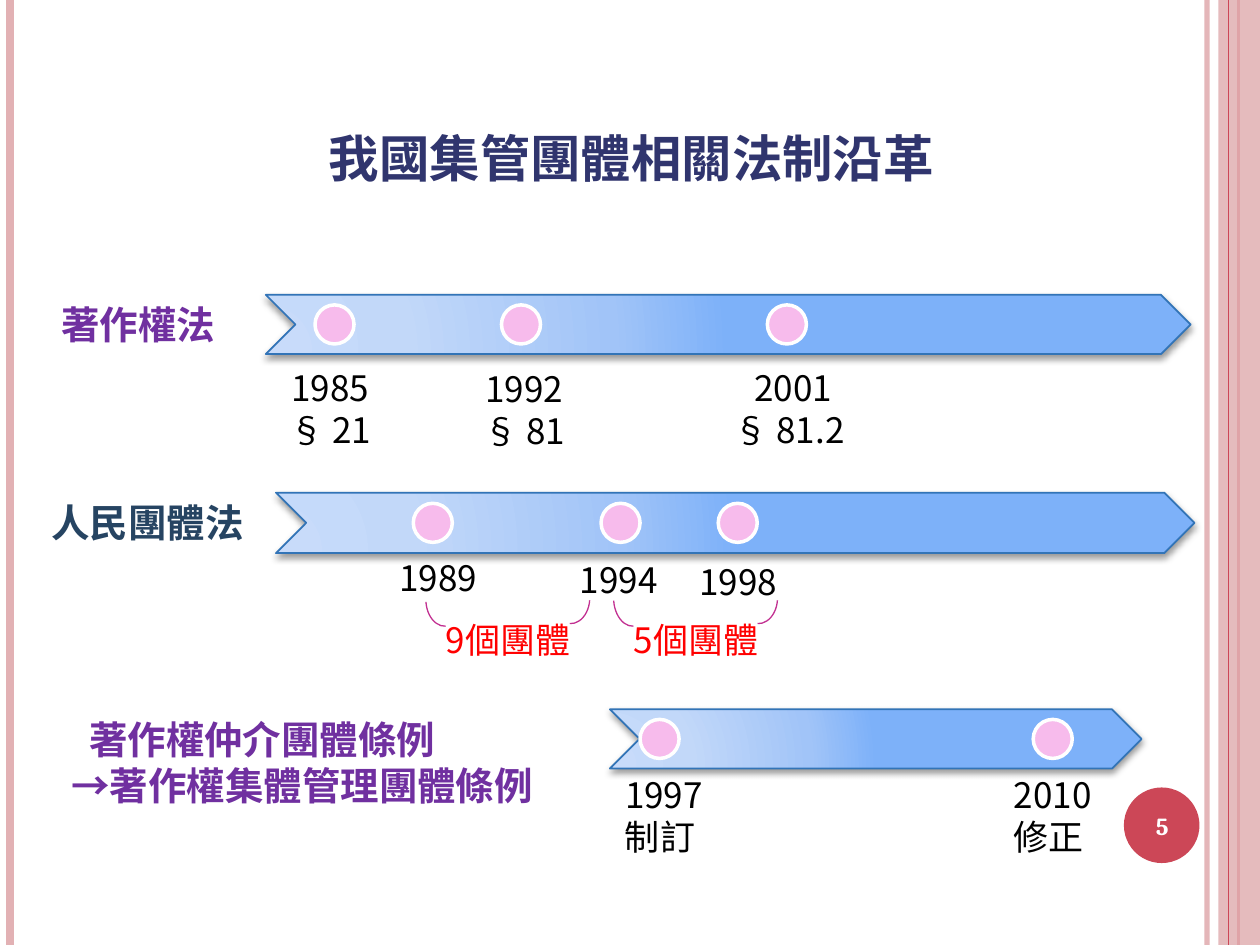
"""Build the slide on the legal history of collective management organisations."""
import pptx
import pptx.dml.color
import pptx.enum.shapes
import pptx.enum.text
import pptx.oxml
import pptx.oxml.ns
import pptx.util
from pptx.util import Inches

RGBColor = pptx.dml.color.RGBColor
MSO_SHAPE = pptx.enum.shapes.MSO_SHAPE
ALIGN = pptx.enum.text.PP_ALIGN
ANCHOR = pptx.enum.text.MSO_ANCHOR
AUTO_SIZE = pptx.enum.text.MSO_AUTO_SIZE
qn = pptx.oxml.ns.qn

NAVY = RGBColor(0x30, 0x35, 0x6E)
PURPLE = RGBColor(0x70, 0x30, 0xA0)
SLATE = RGBColor(0x26, 0x44, 0x62)
BLACK = RGBColor(0, 0, 0)
WHITE = RGBColor(0xFF, 0xFF, 0xFF)
RED = RGBColor(0xFF, 0, 0)
ROSE = RGBColor(0xE2, 0xB1, 0xB4)
CRIMSON = RGBColor(0xCC, 0x47, 0x57)
PINK = RGBColor(0xF7, 0xBB, 0xEC)
MAGENTA = RGBColor(0xC2, 0x30, 0x91)
BLUE = RGBColor(0x32, 0x74, 0xB7)
ARROW_STOPS = [
    (0, RGBColor(0xC8, 0xDB, 0xFA)),
    (30, RGBColor(0xC2, 0xD8, 0xF9)),
    (75, RGBColor(0xA1, 0xC4, 0xF8)),
    (100, RGBColor(0x7D, 0xB1, 0xF9)),
]
CJK = "Noto Sans CJK SC"
DOT = 0.31


def drawing_xml(body):
    """Parse one DrawingML element."""
    head, tail = body.split(" ", 1)
    return pptx.oxml.parse_xml(f"{head} {pptx.oxml.ns.nsdecls('a')} {tail}")


class TimelineSlide:
    """Hold the style and the current slide."""

    def __init__(self, presentation):
        self.slide = presentation.slides.add_slide(presentation.slide_layouts[5])
        self.canvas = self.slide.shapes

    def begin_group(self):
        self.canvas = self.slide.shapes.add_group_shape().shapes

    def end_group(self):
        self.canvas = self.slide.shapes

    def set_alpha(self, element, percent):
        color = next(element.iter(qn("a:srgbClr")))
        color.append(drawing_xml(f'<a:alpha val="{percent * 1000}"/>'))

    def format_text(self, frame, size, color, bold=False, align=ALIGN.LEFT, font=CJK):
        for paragraph in frame.paragraphs:
            paragraph.alignment = align
            for run in paragraph.runs:
                run.font.size = pptx.util.Pt(size)
                run.font.bold = bold
                run.font.color.rgb = color
                run.font.name = font
                run.font._element.append(drawing_xml(f'<a:ea typeface="{font}"/>'))

    def title(self, text):
        heading = self.slide.shapes.title
        heading.left, heading.top = Inches(0.51), Inches(0.52)
        heading.width, heading.height = Inches(9), Inches(1.04)
        frame = heading.text_frame
        frame.text = text
        frame.auto_size = AUTO_SIZE.NONE
        frame.vertical_anchor = ANCHOR.BOTTOM
        self.format_text(frame, 36, NAVY, True, ALIGN.CENTER)
        frame.paragraphs[0].runs[0].font._element.set("cap", "small")

    def text(self, text, left, top, width, height, size, color, **style):
        box = self.canvas.add_textbox(Inches(left), Inches(top), Inches(width), Inches(height))
        frame = box.text_frame
        frame.text = text
        frame.word_wrap = True
        frame.auto_size = AUTO_SIZE.SHAPE_TO_FIT_TEXT
        self.format_text(frame, size, color, **style)
        return frame

    def shape(self, kind, left, top, width, height, fill=None, line=None, weight=1):
        item = self.canvas.add_shape(kind, Inches(left), Inches(top), Inches(width), Inches(height))
        item.shadow.inherit = False
        if fill is None:
            item.fill.background()
        else:
            item.fill.solid()
            item.fill.fore_color.rgb = fill
        if line is None:
            item.line.fill.background()
        else:
            item.line.color.rgb = line
            item.line.width = pptx.util.Pt(weight)
        return item

    def stripe(self, x, color, weight, alpha=None):
        stripe = self.canvas.add_connector(
            pptx.enum.shapes.MSO_CONNECTOR.STRAIGHT, Inches(x), 0, Inches(x), Inches(7.5))
        stripe.line.color.rgb = color
        stripe.line.width = pptx.util.Pt(weight)
        if alpha:
            self.set_alpha(stripe._element.spPr, alpha)
        stripe._element.spPr.append(drawing_xml("<a:effectLst />"))

    def arrow(self, left, top, width, height):
        arrow = self.shape(MSO_SHAPE.CHEVRON, left, top, width, height, WHITE, BLUE)
        stops = "".join(
            f'<a:gs pos="{at * 1000}"><a:srgbClr val="{color}"/></a:gs>' for at, color in ARROW_STOPS)
        properties = arrow._element.spPr
        properties.replace(properties.find(qn("a:solidFill")), drawing_xml(
            f'<a:gradFill rotWithShape="1"><a:gsLst>{stops}</a:gsLst><a:path path="circle">'
            '<a:fillToRect l="5000" t="100000" r="120000" b="10000"/></a:path></a:gradFill>'))
        properties.find(qn("a:effectLst")).append(drawing_xml(
            '<a:outerShdw blurRad="50800" dist="25400" dir="5400000" rotWithShape="0">'
            '<a:srgbClr val="000000"><a:alpha val="40000"/></a:srgbClr></a:outerShdw>'))

    def timeline(self, left, top, width, height, events):
        self.begin_group()
        self.arrow(left, top, width, height)
        for dot_left, label_left, label_top, label_width, label in events:
            self.shape(MSO_SHAPE.FLOWCHART_CONNECTOR, dot_left, top + (height - DOT) / 2,
                       DOT, DOT, PINK, WHITE, 2)
            label_height = 0.77 if "\n" in label else 0.44
            self.text(label, label_left, label_top, label_width, label_height, 20, BLACK,
                      align=ALIGN.CENTER)

    def period(self, text, left, top, height):
        self.text(text, left + 0.06, 4.86, 1.25, 0.44, 20, RED)
        opening = self.shape(MSO_SHAPE.ARC, left, top, 0.29, height, line=MAGENTA, weight=0.75)
        opening.rotation = 176.7
        opening.adjustments[1] = 215.19
        closing = self.shape(MSO_SHAPE.ARC, left + 1.01, 4.56, 0.29, 0.39,
                             line=MAGENTA, weight=0.75)
        closing.rotation = 183.8
        closing._element.spPr.find(qn("a:xfrm")).set("flipH", "1")


def main():
    presentation = pptx.Presentation()
    presentation.slide_width, presentation.slide_height = Inches(10), Inches(7.5)
    history = TimelineSlide(presentation)

    history.stripe(9.58, ROSE, 3, 93)
    history.stripe(0.08, ROSE, 4.5)
    history.stripe(9.83, CRIMSON, 1.5)
    margin_band = history.shape(MSO_SHAPE.RECTANGLE, 9.67, 0, 0.33, 7.5, ROSE)
    history.set_alpha(margin_band._element.spPr, 87)
    history.stripe(9.75, CRIMSON, 0.75)
    history.shape(MSO_SHAPE.OVAL, 8.92, 6.25, 0.6, 0.6, CRIMSON)

    history.title("我國集管團體相關法制沿革")
    history.text("著作權法", 0.39, 2.34, 1.56, 0.47, 22, PURPLE, bold=True)
    history.text("人民團體法", 0.31, 3.91, 1.8, 0.47, 22, SLATE, bold=True)
    ordinance = history.text("著作權仲介團體條例\n→著作權集體管理團體條例",
                             0.47, 5.63, 4.06, 0.84, 22, PURPLE, bold=True)
    first_name = ordinance.paragraphs[0]._p.get_or_add_pPr()
    first_name.set("marL", str(Inches(0.14)))
    first_name.set("indent", "0")

    history.timeline(4.84, 5.63, 4.22, 0.47, [
        (5.08, 4.84, 6.09, 0.86, "1997\n制訂 "),
        (8.2, 7.81, 6.09, 1.09, "2010\n修正 "),
    ])
    history.timeline(2.11, 2.34, 7.34, 0.47, [
        (2.5, 2.19, 2.86, 0.86, "1985\n§ 21 "),
        (3.98, 3.73, 2.87, 0.86, "1992\n§ 81 "),
        (6.09, 5.71, 2.86, 1.17, "2001\n§ 81.2 "),
    ])
    history.timeline(2.19, 3.91, 7.29, 0.48, [
        (3.28, 3.05, 4.37, 0.86, "1989"),
        (4.77, 4.48, 4.38, 0.86, "1994"),
        (5.7, 5.43, 4.4, 0.86, "1998"),
    ])
    history.period("9個團體", 3.38, 4.56, 0.41)
    history.period("5個團體", 4.87, 4.54, 0.43)
    history.end_group()

    page_number = history.text("5", 8.89, 6.27, 0.67, 0.57, 14, WHITE, bold=True,
                               align=ALIGN.CENTER, font="Cambria")
    page_number.auto_size = AUTO_SIZE.NONE
    page_number.vertical_anchor = ANCHOR.MIDDLE
    presentation.save("out.pptx")


if __name__ == "__main__":
    main()
